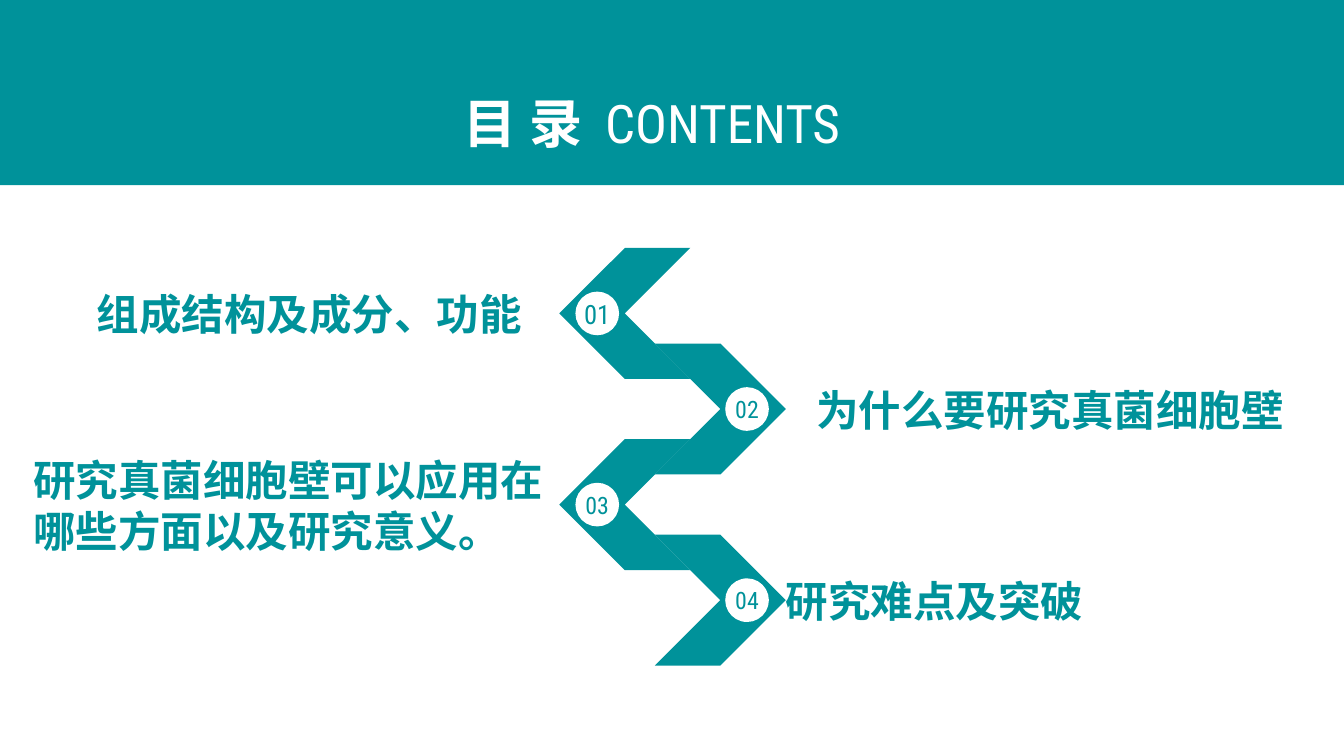
"""Build the contents slide: a teal title band and a zigzag of four numbered chapters."""
from dataclasses import dataclass

from lxml.etree import SubElement
from pptx import Presentation
from pptx.dml.color import RGBColor
from pptx.enum.shapes import MSO_SHAPE
from pptx.enum.text import MSO_ANCHOR, MSO_AUTO_SIZE, PP_ALIGN
from pptx.oxml.ns import qn
from pptx.util import Cm, Pt


@dataclass(frozen=True)
class Theme:
    teal: RGBColor = RGBColor(0x00, 0x92, 0x9A)
    white: RGBColor = RGBColor(0xFF, 0xFF, 0xFF)
    font: str = "Roboto Condensed"
    title: int = 40
    label: int = 32
    first_number: int = 20
    number: int = 18


theme = Theme()


def add_plain_shape(page, kind, left, top, width, height, colour):
    shape = page.shapes.add_shape(kind, Cm(left), Cm(top), Cm(width), Cm(height))
    shape.shadow.inherit = False
    shape.fill.solid()
    shape.fill.fore_color.rgb = colour
    shape.line.fill.background()
    return shape


def write_text(shape, text, size, colour, align, bold=False):
    frame = shape.text_frame
    frame.text = text
    frame.word_wrap = True
    frame.auto_size = MSO_AUTO_SIZE.NONE
    frame.vertical_anchor = MSO_ANCHOR.MIDDLE
    frame.margin_left = frame.margin_right = frame.margin_top = frame.margin_bottom = 0
    para = frame.paragraphs[0]
    para.alignment = align
    for span in para.runs:
        span.font.name = theme.font
        span.font.size = Pt(size)
        span.font.bold = bold
        span.font.color.rgb = colour
        east_asian = SubElement(span.font._element, qn("a:ea"))
        east_asian.set("typeface", theme.font)


deck = Presentation()
deck.slide_width, deck.slide_height = Cm(35.71), Cm(20.09)
page = deck.slides.add_slide(deck.slide_layouts[5])

title = page.shapes.title
title.left, title.top, title.width, title.height = Cm(12.14), Cm(2.39), Cm(3.33), Cm(1.7)
write_text(title, "目 录", theme.title, theme.white, PP_ALIGN.RIGHT, bold=True)

band = add_plain_shape(page, MSO_SHAPE.RECTANGLE, 0, 0, 35.71, 4.92, theme.teal)
title.element.addprevious(band.element)

subtitle = page.shapes.add_textbox(Cm(16.08), Cm(2.39), Cm(8.23), Cm(1.7))
write_text(subtitle, "CONTENTS", theme.title, theme.white, PP_ALIGN.LEFT)

chapters = [
    ("组成结构及成分、功能", 1.96, 11.91, 1.37, PP_ALIGN.RIGHT, theme.first_number),
    ("为什么要研究真菌细胞壁", 21.69, 13.8, 1.37, PP_ALIGN.LEFT, theme.number),
    ("研究真菌细胞壁可以应用在哪些方面以及研究意义。", 0.89, 14.4, 2.74, PP_ALIGN.LEFT, theme.number),
    ("研究难点及突破", 20.88, 14.4, 1.37, PP_ALIGN.LEFT, theme.number),
]
chevron_size, circle_size = 3.48, 1.16
first_middle, step = 8.33, 2.54

for index, (text, left, width, height, align, number_size) in enumerate(chapters):
    middle = first_middle + index * step
    points_left = index % 2 == 0
    chevron_left, circle_left = (14.86, 15.29) if points_left else (17.4, 19.27)

    chevron = add_plain_shape(page, MSO_SHAPE.CHEVRON, chevron_left, middle - chevron_size / 2,
                              chevron_size, chevron_size, theme.teal)
    chevron.rotation = 180 if points_left else 0

    circle = add_plain_shape(page, MSO_SHAPE.OVAL, circle_left, middle - circle_size / 2,
                             circle_size, circle_size, theme.white)
    write_text(circle, f"{index + 1:02d}", number_size, theme.teal, PP_ALIGN.CENTER)

    label = page.shapes.add_textbox(Cm(left), Cm(middle - height / 2), Cm(width), Cm(height))
    write_text(label, text, theme.label, theme.teal, align, bold=True)

deck.save("out.pptx")
